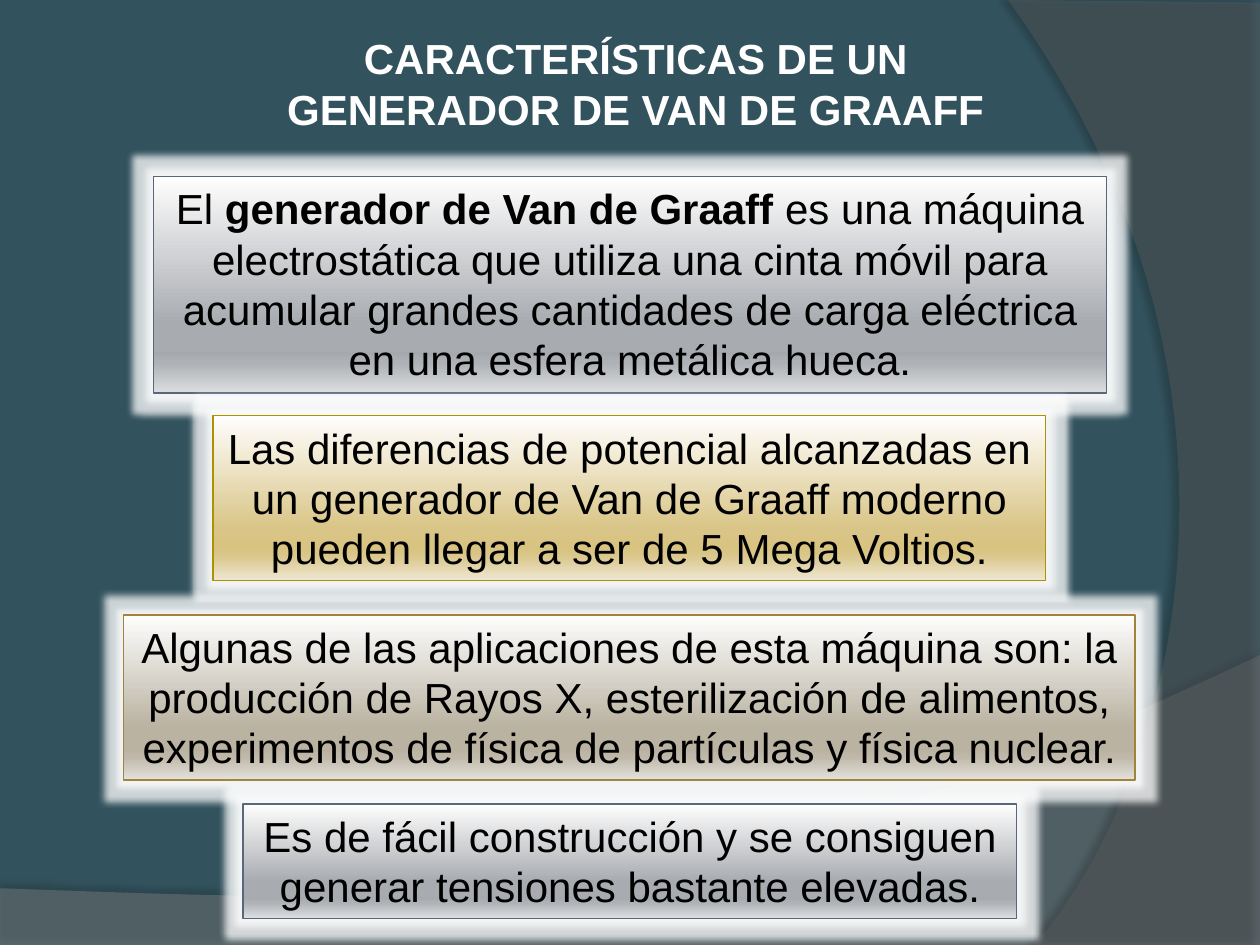
from dataclasses import dataclass

from lxml import etree
from pptx import Presentation
from pptx import util as u
from pptx.dml.color import RGBColor
from pptx.enum import shapes, text
from pptx.oxml import parse_xml
from pptx.oxml.ns import nsdecls, qn

FONT = "Arial"
CURVE_STEPS = 40
GRADIENT_STOPS = (0, 68, 81, 86, 100)

Point = tuple[float, float]


@dataclass
class Style:
    gradient: tuple[str, ...]
    line: str


@dataclass
class Panel:
    left: float
    top: float
    width: float
    height: float
    style: Style
    spans: list[tuple[str, bool]]


@dataclass
class Swoosh:
    start: Point
    before: list[Point]
    curve: tuple[Point, Point, Point]
    after: list[Point]
    color: str
    opacity: int
    shadow_opacity: int
    blur: float
    distance: float
    direction: int


GRAY = Style(("FEFEFE", "A8ABB0", "A5A8AD", "AEB1B5", "DDDEE0"), "59677D")
GOLD = Style(("FFFEFE", "D9C587", "D8C381", "DBC990", "EFE7D3"), "AB9200")
TAUPE = Style(("FEFEFE", "BAB3A2", "B8B19F", "BFB8A9", "E3E1DB"), "A1843A")

PANELS = [
    Panel(1.22, 1.4, 7.56, 1.72, GRAY, [
        ("El ", False),
        ("generador de Van de Graaff", True),
        (" es una máquina electrostática que utiliza una cinta móvil para acumular "
         "grandes cantidades de carga eléctrica en una esfera metálica hueca.", False)]),
    Panel(1.69, 3.3, 6.61, 1.31, GOLD, [
        ("Las diferencias de potencial alcanzadas en un generador de Van de Graaff "
         "moderno pueden llegar a ser de 5 Mega Voltios.", False)]),
    Panel(0.98, 4.88, 8.03, 1.31, TAUPE, [
        ("Algunas de las aplicaciones de esta máquina son: la producción de Rayos X, "
         "esterilización de alimentos, experimentos de física de partículas y física "
         "nuclear.", False)]),
    Panel(1.93, 6.38, 6.14, 0.91, GRAY, [
        ("Es de fácil construcción y se consiguen generar tensiones bastante "
         "elevadas.", False)]),
]

SWOOSHES = [
    Swoosh((0, 7.05), [(0, 7.5), (10, 7.5), (10, 5.2)],
           ((5.59, 7.29), (3.91, 7.19), (0, 7.05)), [],
           "7F7F7F", 45, 35, 4, 3.5, 270),
    Swoosh((10, 0.02), [(10, 7.5), (8.21, 7.5)],
           ((9.35, 6.19), (10.18, 3), (8, 0)), [(10, 0.02)],
           "5E5E5E", 40, 45, 4, 4, 180),
]


def rgb(color: str) -> RGBColor:
    return RGBColor.from_string(color)


def color_xml(color: str, opacity: int = 100) -> str:
    return f'<a:srgbClr val="{color}"><a:alpha val="{opacity * 1000}"/></a:srgbClr>'


def set_effect(shape, effect: str) -> None:
    """Replace the shape's effects with one effect given as XML."""
    shape.shadow.inherit = False
    effects = shape._element.spPr.find(qn("a:effectLst"))
    effects.append(parse_xml(effect))


def cubic(start: Point, curve: tuple[Point, Point, Point]) -> list[Point]:
    """Sample a Bezier curve, leaving out its start."""
    points = []
    for step in range(1, CURVE_STEPS + 1):
        t = step / CURVE_STEPS
        weights = ((1 - t) ** 3, 3 * t * (1 - t) ** 2, 3 * t * t * (1 - t), t ** 3)
        x, y = (sum(w * p[axis] for w, p in zip(weights, (start, *curve)))
                for axis in (0, 1))
        points.append((x, y))
    return points


def draw_swoosh(slide, swoosh: Swoosh) -> None:
    points = swoosh.before + cubic(swoosh.before[-1], swoosh.curve) + swoosh.after
    builder = slide.shapes.build_freeform(*map(u.Inches, swoosh.start))
    builder.add_line_segments([(u.Inches(x), u.Inches(y)) for x, y in points])
    shape = builder.convert_to_shape()
    shape.fill.solid()
    shape.fill.fore_color.rgb = rgb(swoosh.color)
    fill_color = shape._element.spPr.find(qn("a:solidFill"))[0]
    etree.SubElement(fill_color, qn("a:alpha"), val=str(swoosh.opacity * 1000))
    shape.line.fill.background()
    set_effect(shape, f'<a:outerShdw {nsdecls("a")} blurRad="{u.Pt(swoosh.blur)}" '
                      f'dist="{u.Pt(swoosh.distance)}" dir="{swoosh.direction * 60000}">'
                      f'{color_xml("000000", swoosh.shadow_opacity)}</a:outerShdw>')


def set_gradient(shape, colors: tuple[str, ...]) -> None:
    """Fill the shape from top to bottom."""
    stops = "".join(f'<a:gs pos="{stop * 1000}">{color_xml(color)}</a:gs>'
                    for stop, color in zip(GRADIENT_STOPS, colors))
    shape.fill.solid()
    properties = shape._element.spPr
    properties.replace(properties.find(qn("a:solidFill")), parse_xml(
        f'<a:gradFill {nsdecls("a")}><a:gsLst>{stops}</a:gsLst>'
        '<a:lin ang="5400000" scaled="0"/></a:gradFill>'))


def write(shape, spans: list[tuple[str, bool]], color: str) -> None:
    frame = shape.text_frame
    frame.word_wrap = True
    frame.auto_size = text.MSO_AUTO_SIZE.NONE
    frame.vertical_anchor = text.MSO_ANCHOR.TOP
    para = frame.paragraphs[0]
    para.alignment = text.PP_ALIGN.CENTER
    para.line_spacing = 1.0
    for words, bold in spans:
        span = para.add_run()
        span.text = words
        span.font.name = FONT
        span.font.size = u.Pt(24)
        span.font.bold = bold
        span.font.color.rgb = rgb(color)


def draw_panel(slide, panel: Panel) -> None:
    box = slide.shapes.add_shape(
        shapes.MSO_SHAPE.RECTANGLE, u.Inches(panel.left), u.Inches(panel.top),
        u.Inches(panel.width), u.Inches(panel.height))
    set_gradient(box, panel.style.gradient)
    box.line.color.rgb = rgb(panel.style.line)
    box.line.width = u.Pt(0.75)
    set_effect(box, f'<a:glow {nsdecls("a")} rad="{u.Inches(0.11)}">'
                    f'{color_xml("FFFFFF", 75)}</a:glow>')
    write(box, panel.spans, "000000")


def main() -> None:
    deck = Presentation()
    deck.slide_width, deck.slide_height = u.Inches(10), u.Inches(7.5)
    slide = deck.slides.add_slide(deck.slide_layouts[5])
    slide.background.fill.solid()
    slide.background.fill.fore_color.rgb = rgb("32525D")

    for swoosh in SWOOSHES:
        draw_swoosh(slide, swoosh)

    title = slide.shapes.title
    title.left, title.top = u.Inches(2.17), u.Inches(0.21)
    title.width, title.height = u.Inches(5.75), u.Inches(0.91)
    write(title, [("CARACTERÍSTICAS DE UN GENERADOR DE VAN DE GRAAFF", True)], "FFFFFF")

    for panel in PANELS:
        draw_panel(slide, panel)

    deck.save("out.pptx")


if __name__ == "__main__":
    main()
